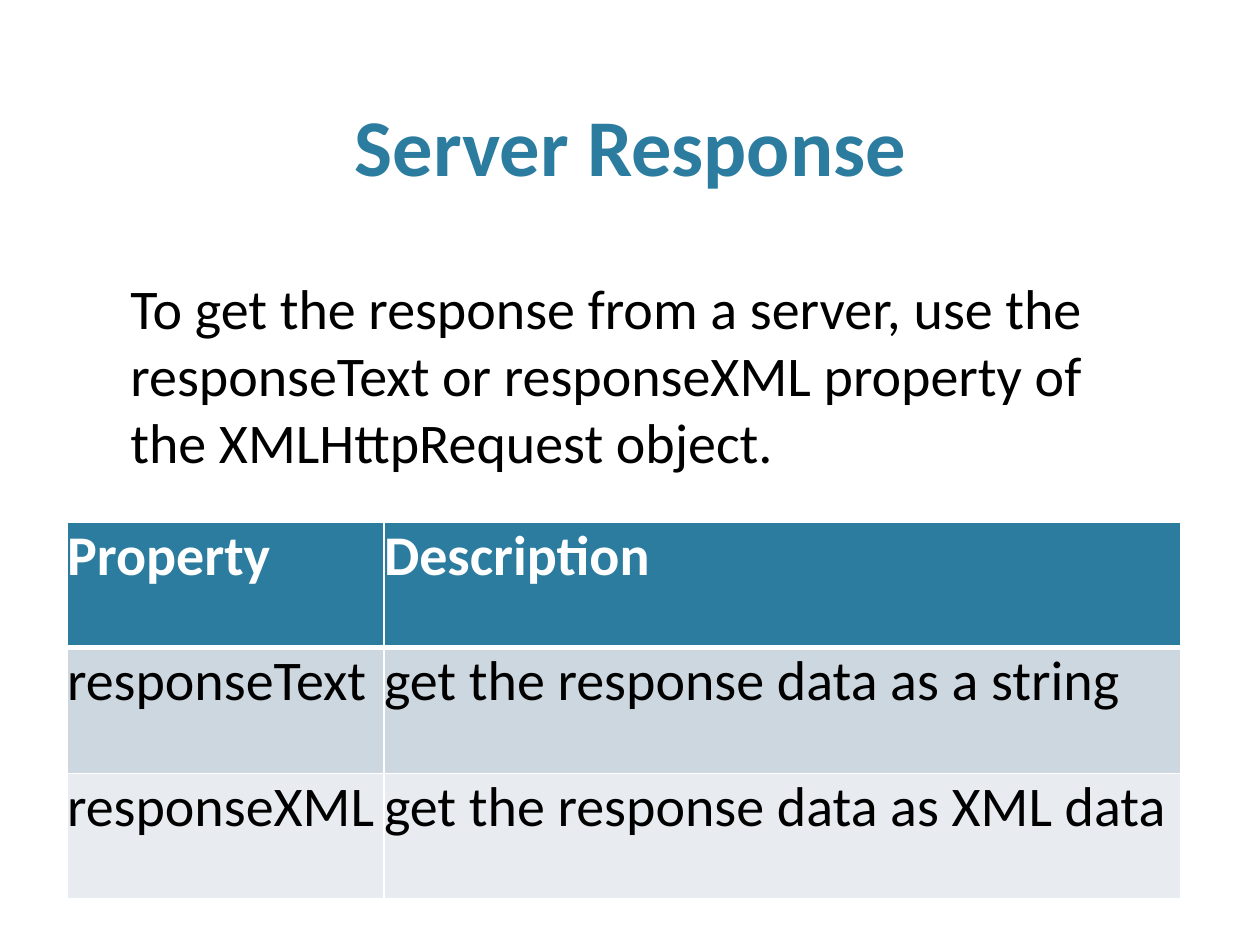
from dataclasses import dataclass

from lxml import etree
from pptx import Presentation
from pptx import util as u
from pptx.dml.color import RGBColor
from pptx.enum import text
from pptx.oxml.ns import qn

PX_PER_INCH = 126


@dataclass(frozen=True)
class Theme:
    font: str = "Calibri"
    title_size: int = 46
    body_size: int = 32
    accent: str = "2C7C9F"
    ink: str = "000000"
    white: str = "FFFFFF"
    bands: tuple = ("CDD7DF", "E8ECF0")
    rule: int = 1
    header_rule: int = 3


THEME = Theme()

PROPERTIES = [
    ("Property", "Description"),
    ("responseText", "get the response data as a string"),
    ("responseXML", "get the response data as XML data"),
]


def px(length):
    return u.Emu(round(length * u.Inches(1) / PX_PER_INCH))


def style(paragraph, size, color, bold=False):
    font = paragraph.font
    font.name = THEME.font
    font.size = u.Pt(size)
    font.bold = bold
    font.color.rgb = RGBColor.from_string(color)


def add_title(slide, box, wording):
    title = slide.shapes.title
    title.left, title.top, title.width, title.height = map(px, box)
    frame = title.text_frame
    frame.text = wording
    frame.vertical_anchor = text.MSO_ANCHOR.BOTTOM
    heading = frame.paragraphs[0]
    heading.alignment = text.PP_ALIGN.CENTER
    style(heading, THEME.title_size, THEME.accent, bold=True)


def add_explanation(slide, box, wording):
    frame = slide.shapes.add_textbox(*map(px, box)).text_frame
    frame.word_wrap = True
    frame.text = wording
    style(frame.paragraphs[0], THEME.body_size, THEME.ink)


def add_borders(cell, **widths):
    """Draw white cell edges, with widths in points keyed L, R, T and B."""
    properties = cell._tc.get_or_add_tcPr()
    for side, width in widths.items():
        line = etree.SubElement(properties, qn(f"a:ln{side}"), w=str(u.Pt(width)))
        fill = etree.SubElement(line, qn("a:solidFill"))
        etree.SubElement(fill, qn("a:srgbClr"), val=THEME.white)


def add_property_table(slide, box, name_width, rows):
    left, top, width, height = box
    table = slide.shapes.add_table(len(rows), 2, *map(px, box)).table
    for column, column_width in zip(table.columns, (name_width, width - name_width)):
        column.width = px(column_width)

    for row_number, entries in enumerate(rows):
        table.rows[row_number].height = px(height / len(rows))
        is_header = row_number == 0
        background = THEME.accent if is_header else THEME.bands[(row_number - 1) % 2]
        above = THEME.header_rule if row_number == 1 else THEME.rule
        below = THEME.header_rule if is_header else THEME.rule
        for column_number, entry in enumerate(entries):
            cell = table.cell(row_number, column_number)
            cell.margin_left = cell.margin_right = 0
            cell.margin_top = cell.margin_bottom = 0
            add_borders(cell, L=THEME.rule, R=THEME.rule, T=above, B=below)
            cell.fill.solid()
            cell.fill.fore_color.rgb = RGBColor.from_string(background)
            cell.text = entry
            style(cell.text_frame.paragraphs[0], THEME.body_size,
                  THEME.white if is_header else THEME.ink, bold=is_header)


def main():
    deck = Presentation()
    deck.slide_width, deck.slide_height = px(1260), px(945)
    title_only = deck.slide_layouts[5]
    slide = deck.slides.add_slide(title_only)
    add_title(slide, (76, 15, 1109, 184), "Server Response")
    add_property_table(slide, (67, 522, 1114, 377), 317, PROPERTIES)
    add_explanation(
        slide, (118, 267, 1022, 217),
        "To get the response from a server, use the responseText or "
        "responseXML property of the XMLHttpRequest object.")
    deck.save("out.pptx")


if __name__ == "__main__":
    main()
